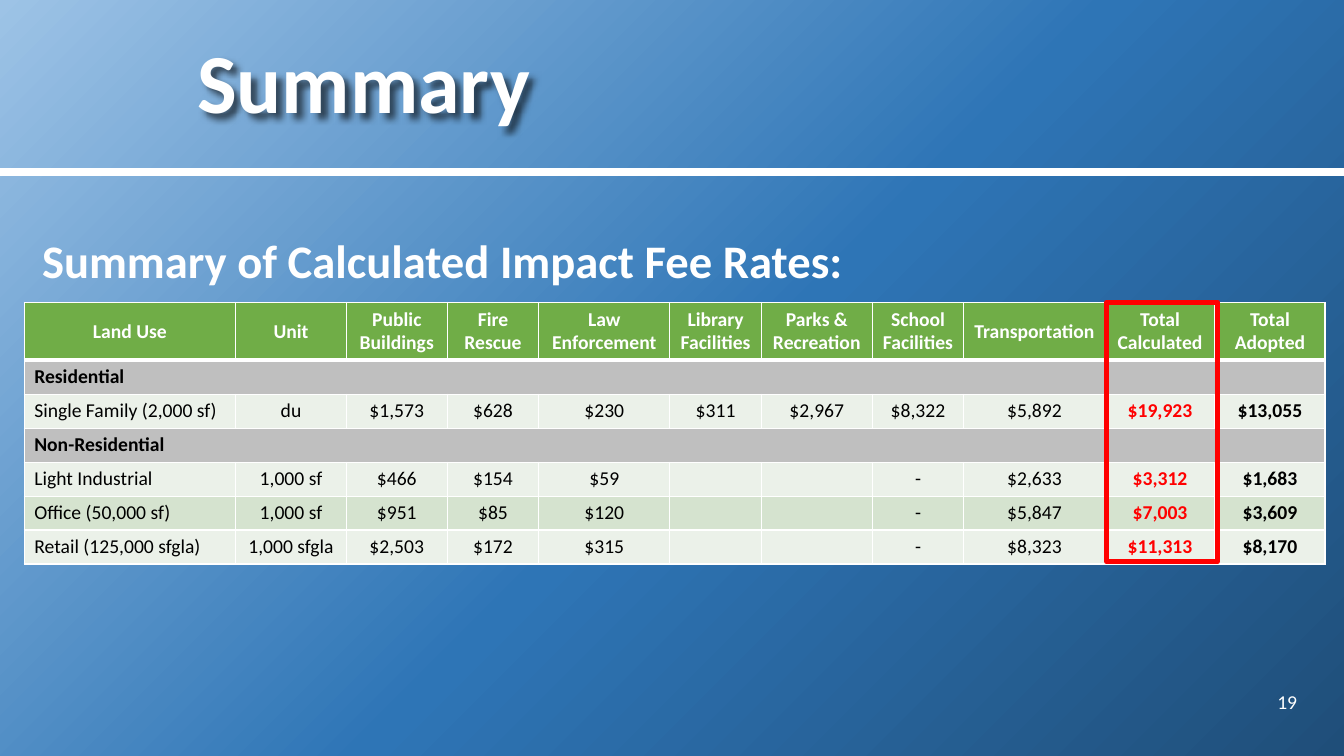
"""Builds the summary slide of calculated impact fee rates."""
import dataclasses

import lxml.etree
import pptx
import pptx.dml.color
import pptx.enum.shapes
import pptx.enum.text
import pptx.oxml
import pptx.oxml.ns
import pptx.util

Cm = pptx.util.Cm
Pt = pptx.util.Pt
qn = pptx.oxml.ns.qn
ALIGN = pptx.enum.text.PP_ALIGN
ANCHOR = pptx.enum.text.MSO_ANCHOR
FONT = "Calibri"
COLORS = {
    "white": "FFFFFF", "black": "000000", "red": "FF0000", "header": "70AD47",
    "section": "BFBFBF", "light": "EBF1E9", "band": "D5E3CF",
    "sky": "9DC3E6", "blue": "2E75B6", "navy": "1F4E79",
}


@dataclasses.dataclass(frozen=True)
class Label:
    text: str
    box: tuple[float, float, float, float]
    size: float
    bold: bool = True
    align: ALIGN = ALIGN.LEFT
    anchor: ANCHOR = ANCHOR.MIDDLE
    spacing: float = 1.0
    shadow: bool = False


@dataclasses.dataclass(frozen=True)
class Column:
    title: str
    width: float
    values: tuple[str, ...]
    color: str = "black"
    bold: bool = False
    align: ALIGN = ALIGN.CENTER


LABELS = [
    Label("19", (30.68, 17.17, 2.26, 1.02), 14, bold=False, align=ALIGN.RIGHT),
    Label("Summary of Calculated Impact Fee Rates:", (0.81, 5.59, 32.46, 1.75), 33.3,
          anchor=ANCHOR.TOP, spacing=1.1),
    Label("Summary", (4.72, 0, 28.19, 4.34), 60, spacing=0.9, shadow=True),
]
SECTIONS = {1: "Residential", 3: "Non-Residential"}
DATA_ROWS = (2, 4, 5, 6)
COLUMNS = [
    Column("Land Use", 5.33, ("Single Family (2,000 sf)", "Light Industrial",
                              "Office (50,000 sf)", "Retail (125,000 sfgla)"),
           align=ALIGN.LEFT),
    Column("Unit", 2.79, ("du", "1,000 sf", "1,000 sf", "1,000 sfgla")),
    Column("Public Buildings", 2.54, ("$1,573", "$466", "$951", "$2,503")),
    Column("Fire Rescue", 2.31, ("$628", "$154", "$85", "$172")),
    Column("Law Enforcement", 3.3, ("$230", "$59", "$120", "$315")),
    Column("Library Facilities", 2.31, ("$311", "", "", "")),
    Column("Parks & Recreation", 2.79, ("$2,967", "", "", "")),
    Column("School Facilities", 2.31, ("$8,322", "-", "-", "-")),
    Column("Transportation", 3.56, ("$5,892", "$2,633", "$5,847", "$8,323")),
    Column("Total Calculated", 2.77, ("$19,923", "$3,312", "$7,003", "$11,313"),
           color="red", bold=True),
    Column("Total Adopted", 2.77, ("$13,055", "$1,683", "$3,609", "$8,170"), bold=True),
]
TABLE_LEFT, TABLE_TOP = 0.61, 7.62
HEADER_HEIGHT, ROW_HEIGHT = 1.44, 0.85


def rgb(name: str) -> pptx.dml.color.RGBColor:
    return pptx.dml.color.RGBColor.from_string(COLORS[name])


def write(tf, text: str, *, size: float = 14, color: str = "white", bold: bool = False,
          align: ALIGN = ALIGN.LEFT, spacing: float = 1.0) -> None:
    p = tf.paragraphs[0]
    p.alignment = align
    p.line_spacing = spacing
    if not text:
        end = lxml.etree.SubElement(p._p, qn("a:endParaRPr"))
        end.set("sz", str(round(size * 100)))
        return
    r = p.add_run()
    r.text = text
    r.font.name = FONT
    r.font.size = Pt(size)
    r.font.bold = bold
    r.font.color.rgb = rgb(color)


def set_background(s) -> None:
    fill = s.background.fill
    fill.gradient()
    grad = fill._fill._gradFill
    stops = "".join(
        f'<a:gs pos="{pos * 1000}"><a:srgbClr val="{COLORS[name]}"/></a:gs>'
        for pos, name in ((0, "sky"), (53, "blue"), (100, "navy")))
    source = pptx.oxml.parse_xml(
        f'<a:gradFill {pptx.oxml.ns.nsdecls("a")} rotWithShape="1"><a:gsLst>{stops}</a:gsLst>'
        '<a:path path="circle"><a:fillToRect r="100000" b="100000"/></a:path>'
        '<a:tileRect l="-100000" t="-100000"/></a:gradFill>')
    grad.getparent().replace(grad, source)


def add_label(s, label: Label) -> None:
    sp = s.shapes.add_textbox(*map(Cm, label.box))
    tf = sp.text_frame
    tf.word_wrap = True
    tf.vertical_anchor = label.anchor
    write(tf, label.text, size=label.size, bold=label.bold, align=label.align,
          spacing=label.spacing)
    if label.shadow:
        sp._element.spPr.append(pptx.oxml.parse_xml(
            f'<a:effectLst {pptx.oxml.ns.nsdecls("a")}>'
            '<a:outerShdw blurRad="50800" dist="57150" dir="2700000" algn="tl" rotWithShape="0">'
            f'<a:srgbClr val="{COLORS["black"]}"><a:alpha val="60000"/></a:srgbClr>'
            '</a:outerShdw></a:effectLst>'))


def style_cell(cell, fill: str, top: float = 1, bottom: float = 1) -> None:
    tcPr = cell._tc.get_or_add_tcPr()
    for side, width in (("L", 1), ("R", 1), ("T", top), ("B", bottom)):
        tcPr.append(pptx.oxml.parse_xml(
            f'<a:ln{side} {pptx.oxml.ns.nsdecls("a")} w="{Pt(width)}"><a:solidFill>'
            f'<a:srgbClr val="{COLORS["white"]}"/></a:solidFill></a:ln{side}>'))
    cell.fill.solid()
    cell.fill.fore_color.rgb = rgb(fill)
    cell.vertical_anchor = ANCHOR.MIDDLE


def add_fee_table(s) -> None:
    row_count = 1 + len(SECTIONS) + len(DATA_ROWS)
    width = sum(column.width for column in COLUMNS)
    height = HEADER_HEIGHT + ROW_HEIGHT * (row_count - 1)
    table = s.shapes.add_table(row_count, len(COLUMNS), Cm(TABLE_LEFT), Cm(TABLE_TOP),
                               Cm(width), Cm(height)).table
    for i, row in enumerate(table.rows):
        row.height = Cm(ROW_HEIGHT if i else HEADER_HEIGHT)
    for j, column in enumerate(COLUMNS):
        table.columns[j].width = Cm(column.width)
        header = table.cell(0, j)
        style_cell(header, "header", bottom=3)
        write(header.text_frame, column.title, bold=True, align=ALIGN.CENTER)
        for i, value in zip(DATA_ROWS, column.values):
            cell = table.cell(i, j)
            style_cell(cell, "band" if i % 2 else "light")
            write(cell.text_frame, value, color=column.color, bold=column.bold,
                  align=column.align)
        for i, title in SECTIONS.items():
            cell = table.cell(i, j)
            style_cell(cell, "section", top=3 if i == 1 else 1)
            write(cell.text_frame, "" if j else title, color="black", bold=True)
    for i in SECTIONS:
        table.cell(i, 0).merge(table.cell(i, len(COLUMNS) - 1))


def add_divider(s) -> None:
    line = s.shapes.add_connector(pptx.enum.shapes.MSO_CONNECTOR.STRAIGHT,
                                  Cm(-0.05), Cm(4.34), Cm(33.87), Cm(4.34))
    line.line.color.rgb = rgb("white")
    line.line.width = Pt(6)
    lxml.etree.SubElement(line._element.spPr, qn("a:effectLst"))


def add_highlight(s) -> None:
    sp = s.shapes.add_shape(pptx.enum.shapes.MSO_SHAPE.RECTANGLE,
                            Cm(27.89), Cm(TABLE_TOP), Cm(2.79), Cm(6.53))
    sp.shadow.inherit = False
    sp.fill.background()
    sp.line.color.rgb = rgb("red")
    sp.line.width = Pt(4)


def main() -> None:
    prs = pptx.Presentation()
    prs.slide_width, prs.slide_height = Cm(33.87), Cm(19.05)
    s = prs.slides.add_slide(prs.slide_layouts[6])
    set_background(s)
    add_divider(s)
    add_fee_table(s)
    add_highlight(s)
    for label in LABELS:
        add_label(s, label)
    prs.save("out.pptx")


if __name__ == "__main__":
    main()
